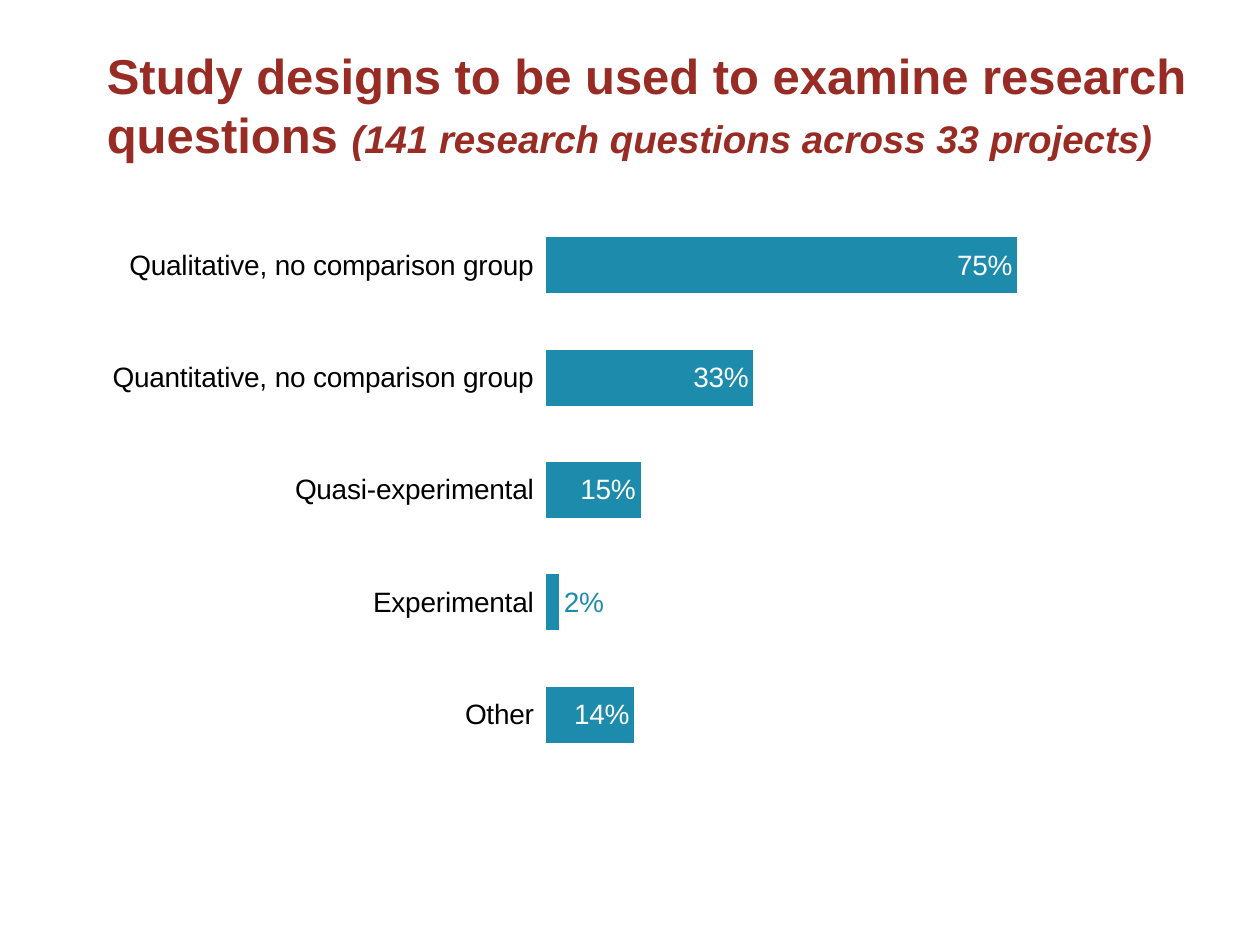
"""Build a slide with a bar chart of the study designs used for research questions."""
from dataclasses import dataclass

from lxml.etree import SubElement
from pptx import Presentation
from pptx.chart.chart import Chart
from pptx.chart.data import CategoryChartData
from pptx.dml.color import RGBColor
from pptx.enum.chart import XL_CHART_TYPE, XL_LABEL_POSITION, XL_TICK_LABEL_POSITION, XL_TICK_MARK
from pptx.enum.text import MSO_ANCHOR, MSO_AUTO_SIZE, PP_ALIGN
from pptx.oxml.ns import qn
from pptx.slide import Slide
from pptx.text.text import Font
from pptx.util import Cm, Pt

RED, TEAL, WHITE, BLACK = "982C24", "1C8BAC", "FFFFFF", "000000"


@dataclass
class Design:
    name: str
    share: float


@dataclass
class Part:
    text: str
    size: int
    slant: bool


DESIGNS = [
    Design("Other", 0.14),
    Design("Experimental", 0.02),
    Design("Quasi-experimental", 0.15),
    Design("Quantitative, no comparison group", 0.33),
    Design("Qualitative, no comparison group", 0.75),
]
TITLE = [
    Part("Study designs to be used to examine research questions ", 28, False),
    Part("(141 research questions across 33 projects)", 22, True),
]
PLOT = {"x": 0.404, "y": 0.031, "w": 0.561, "h": 0.857}
SMALL = 0.05


def color(code: str) -> RGBColor:
    return RGBColor.from_string(code)


def style(font: Font, size: int, code: str) -> None:
    font.name = "Arial"
    font.size = Pt(size)
    font.color.rgb = color(code)


def add_title(slide: Slide) -> None:
    title = slide.shapes.title
    title.left, title.top, title.width, title.height = Cm(1.9), Cm(0.76), Cm(23.06), Cm(2.7)
    frame = title.text_frame
    frame.auto_size = MSO_AUTO_SIZE.NONE
    frame.vertical_anchor = MSO_ANCHOR.MIDDLE
    line = frame.paragraphs[0]
    line.alignment = PP_ALIGN.LEFT
    for part in TITLE:
        run = line.add_run()
        run.text = part.text
        style(run.font, part.size, RED)
        run.font.bold, run.font.italic = True, part.slant


def place_plot(chart: Chart) -> None:
    area = chart.element.find(".//" + qn("c:plotArea"))
    for old in area.findall(qn("c:layout")):
        area.remove(old)
    layout = SubElement(area, qn("c:layout"))
    area.insert(0, layout)
    manual = SubElement(layout, qn("c:manualLayout"))
    rules = {"layoutTarget": "inner", "xMode": "edge", "yMode": "edge", **PLOT}
    for tag, value in rules.items():
        SubElement(manual, qn(f"c:{tag}")).set("val", str(value))


def style_axes(chart: Chart) -> None:
    names, scale = chart.category_axis, chart.value_axis
    names.major_tick_mark = names.minor_tick_mark = XL_TICK_MARK.NONE
    names.tick_label_position = XL_TICK_LABEL_POSITION.LOW
    names.format.line.fill.background()
    style(names.tick_labels.font, 16, BLACK)
    scale.minimum_scale, scale.maximum_scale, scale.major_unit = 0, 1, 0.2
    scale.has_major_gridlines = False
    scale.tick_labels.number_format = "0.0%"
    scale.tick_labels.number_format_is_linked = False
    scale.visible = False


def style_bars(chart: Chart) -> None:
    plot = chart.plots[0]
    plot.gap_width = 100
    plot.vary_by_categories = False
    bars = plot.series[0]
    bars.format.fill.solid()
    bars.format.fill.fore_color.rgb = color(TEAL)
    labels = bars.data_labels
    labels.show_value = True
    labels.number_format, labels.number_format_is_linked = "0%", False
    labels.position = XL_LABEL_POSITION.INSIDE_END
    style(labels.font, 16, WHITE)
    for index, design in enumerate(DESIGNS):
        if design.share < SMALL:
            label = bars.points[index].data_label
            line = label.text_frame.paragraphs[0]
            run = line.add_run()
            run.text = f"{design.share:.0%}"
            style(run.font, 16, TEAL)
            label.position = XL_LABEL_POSITION.OUTSIDE_END


def add_bars(slide: Slide) -> None:
    data = CategoryChartData(number_format="0%")
    data.categories = [design.name for design in DESIGNS]
    data.add_series("Series 1", [design.share for design in DESIGNS])
    chart = slide.shapes.add_chart(
        XL_CHART_TYPE.BAR_CLUSTERED, Cm(1.9), Cm(3.81), Cm(22.56), Cm(13.21), data
    ).chart
    chart.has_legend = chart.has_title = False
    style(chart.font, 14, BLACK)
    place_plot(chart)
    style_axes(chart)
    style_bars(chart)


def main() -> None:
    deck = Presentation()
    deck.slide_width, deck.slide_height = Cm(25.4), Cm(19.05)
    slide = deck.slides.add_slide(deck.slide_layouts[5])
    add_title(slide)
    add_bars(slide)
    deck.save("out.pptx")


if __name__ == "__main__":
    main()
